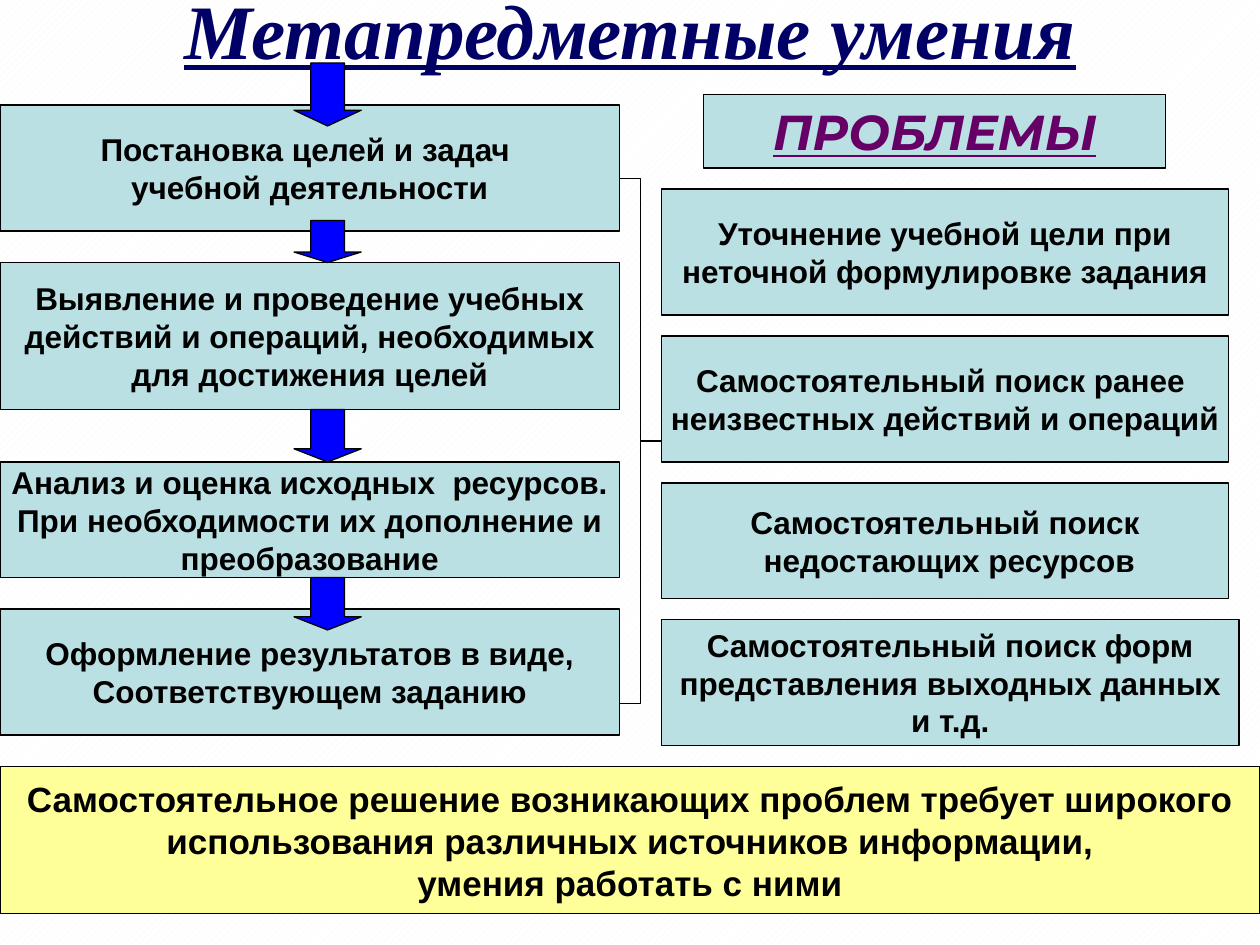
from lxml import etree
from pptx import Presentation
from pptx import util as u
from pptx.dml.color import RGBColor
from pptx.enum import dml, shapes, text

PX = 7620
SLIDE_WIDTH, SLIDE_HEIGHT = 1200, 900

BLACK = RGBColor(0x00, 0x00, 0x00)
WHITE = RGBColor(0xFF, 0xFF, 0xFF)
HATCH = RGBColor(0xF8, 0xF8, 0xF8)
NAVY = RGBColor(0x00, 0x00, 0x66)
PURPLE = RGBColor(0x66, 0x00, 0x66)
BLUE = RGBColor(0x00, 0x00, 0xFF)
PALE_BLUE = RGBColor(0xBB, 0xE0, 0xE3)
YELLOW = RGBColor(0xFF, 0xFF, 0x99)

STEPS = [
    (0, 120, "Постановка целей и задач \nучебной деятельности"),
    (150, 140, "Выявление и проведение учебных\nдействий и операций, необходимых\n"
               "для достижения целей"),
    (340, 110, "Анализ и оценка исходных  ресурсов.\nПри необходимости их дополнение и\n"
               "преобразование"),
    (480, 120, "Оформление результатов в виде,\nСоответствующем заданию"),
]
ARROWS = [(-40, 60), (110, 40), (290, 50), (450, 50)]
PROBLEMS = [
    (540, 120, "Уточнение учебной цели при\nнеточной формулировке задания"),
    (540, 120, "Самостоятельный поиск ранее \nнеизвестных действий и операций"),
    (540, 110, "Самостоятельный поиск\n недостающих ресурсов"),
    (550, 120, "Самостоятельный поиск форм\nпредставления выходных данных\nи т.д."),
]
CONCLUSION = ("Самостоятельное решение возникающих проблем требует широкого\n"
              " использования различных источников информации, \n"
              "умения работать с ними")


def px(*values):
    return [u.Emu(value * PX) for value in values]


def write(frame, content, size, name="Arial", color=BLACK, fancy=False):
    frame.vertical_anchor = text.MSO_ANCHOR.MIDDLE
    frame.text = content
    for paragraph in frame.paragraphs:
        paragraph.alignment = text.PP_ALIGN.CENTER
        font = paragraph.font
        font.size = u.Pt(size)
        font.name = name
        font.color.rgb = color
        font.bold = True
        if fancy:
            font.italic = True
            font.underline = True


def add_outlined(slide, kind, box, fill=None):
    shape = slide.shapes.add_shape(kind, *px(*box))
    shape.shadow.inherit = False
    if fill is None:
        shape.fill.background()
    else:
        shape.fill.solid()
        shape.fill.fore_color.rgb = fill
    shape.line.color.rgb = BLACK
    shape.line.width = u.Pt(0.75)
    return shape


def add_panel(slide, box, content, size=18, fill=PALE_BLUE, **style):
    shape = add_outlined(slide, shapes.MSO_SHAPE.RECTANGLE, box, fill)
    shape.text_frame.word_wrap = False
    write(shape.text_frame, content, size, **style)


def place_title(slide, box):
    title = slide.shapes.title
    title.left, title.top, title.width, title.height = px(*box)
    title.text_frame.auto_size = text.MSO_AUTO_SIZE.NONE
    write(title.text_frame, "Метапредметные умения", 44, "Times New Roman", NAVY, True)


def add_steps(slide, left, top, width):
    for offset, height, content in STEPS:
        add_panel(slide, (left, top + offset, width, height), content)
    for offset, height in ARROWS:
        add_outlined(slide, shapes.MSO_SHAPE.DOWN_ARROW,
                     (left + 280, top + offset, 64, height), BLUE).adjustments[1] = 0.25


def add_problems(slide, left, top, gap):
    add_panel(slide, (left + 40, top, 440, 70), "ПРОБЛЕМЫ", 28,
              name="Montserrat", color=PURPLE, fancy=True)
    top += 70 + gap
    for width, height, content in PROBLEMS:
        add_panel(slide, (left, top, width, height), content)
        top += height + gap


def add_brace(slide, box):
    brace = add_outlined(slide, shapes.MSO_SHAPE.RIGHT_BRACE, box)
    brace.adjustments[0] = 0
    brace.adjustments[1] = 0.5


def main():
    presentation = Presentation()
    presentation.slide_width, presentation.slide_height = px(SLIDE_WIDTH, SLIDE_HEIGHT)
    slide = presentation.slides.add_slide(presentation.slide_layouts[5])
    background = slide.background.fill
    background.patterned()
    background.pattern = dml.MSO_PATTERN.WIDE_UPWARD_DIAGONAL
    background.fore_color.rgb = HATCH
    background.back_color.rgb = WHITE

    place_title(slide, (40, 0, 1120, 54))
    add_steps(slide, 0, 100, 590)
    add_problems(slide, 630, 90, 20)
    add_brace(slide, (590, 170, 40, 500))
    add_panel(slide, (0, 730, SLIDE_WIDTH, 140), CONCLUSION, 20, YELLOW)
    presentation.save("out.pptx")


if __name__ == "__main__":
    main()
